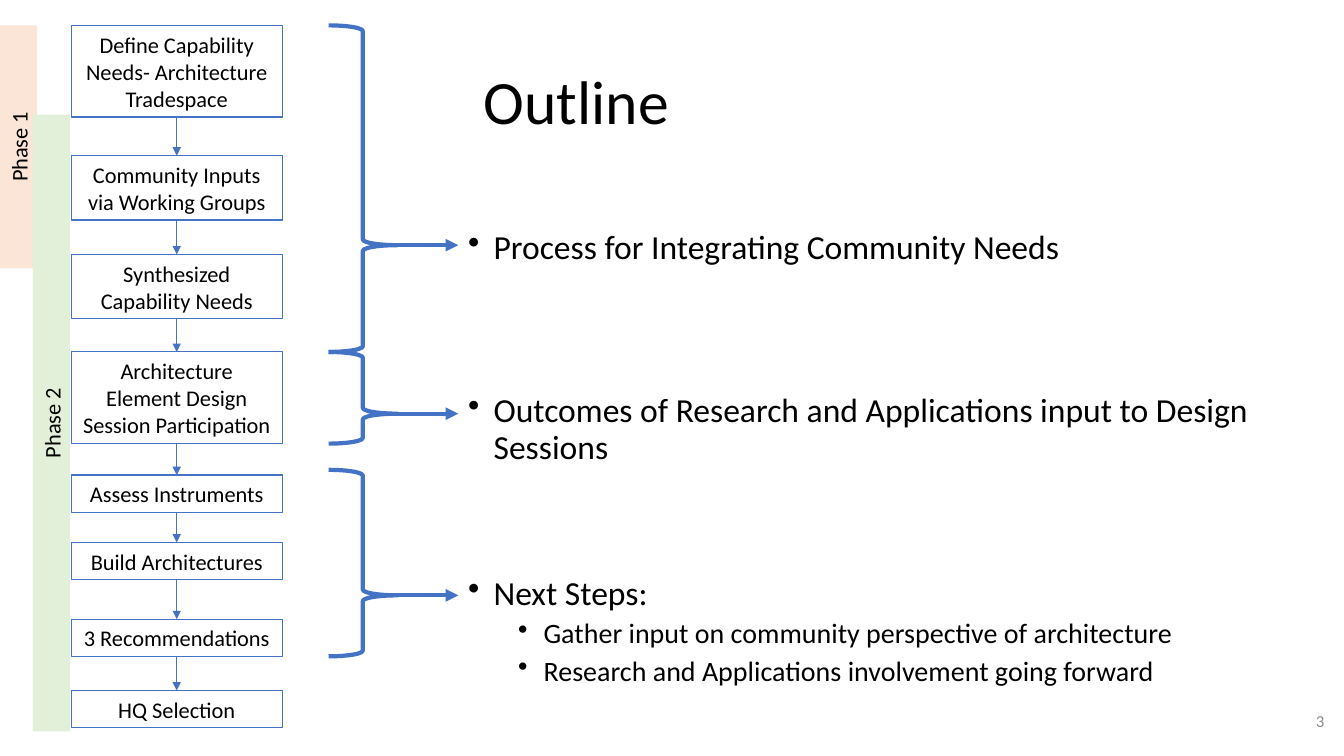
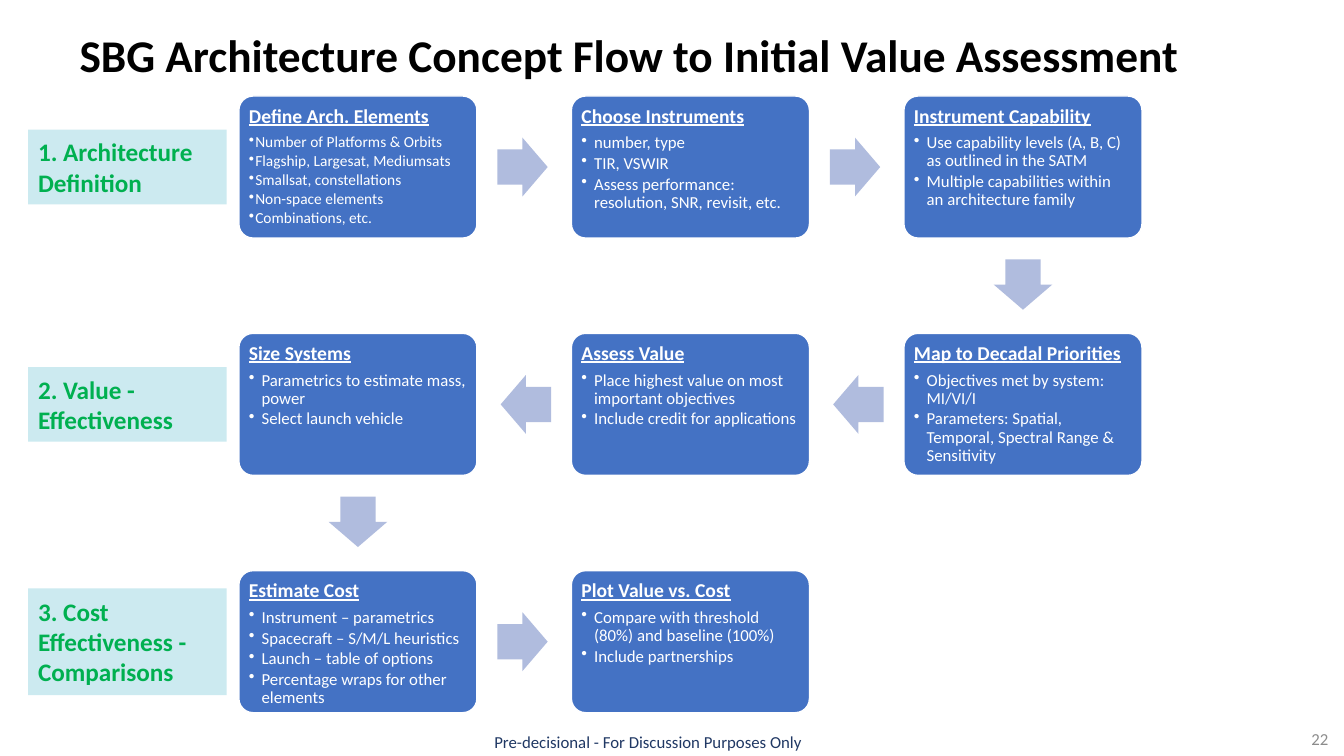
from dataclasses import dataclass
from itertools import pairwise
from math import atan2, degrees
from typing import NamedTuple

from lxml.etree import SubElement
from pptx import Presentation
from pptx.dml.color import RGBColor
from pptx.enum.shapes import MSO_CONNECTOR as Connector, MSO_SHAPE as Preset
from pptx.enum.text import MSO_ANCHOR as Anchor, MSO_AUTO_SIZE as AutoSize, PP_ALIGN as Align
from pptx.oxml.ns import qn
from pptx.util import Cm, Pt


class Box(NamedTuple):
    left: float
    top: float
    width: float
    height: float

    def inner(self, left, top, width, height):
        return Box(self.left + left, self.top + top, width, height)

    def lengths(self):
        return [Cm(value) for value in self]

    def center(self):
        return self.left + self.width / 2, self.top + self.height / 2


def centered_box(x, y, width, height):
    return Box(x - width / 2, y - height / 2, width, height)


@dataclass(frozen=True)
class Theme:
    font: str = "Calibri"
    black: str = "000000"
    white: str = "FFFFFF"
    blue: str = "4472C4"
    navy: str = "203864"
    green: str = "00B050"
    gray: str = "8C8C8C"
    pale_blue: str = "B0BCDE"
    pale_cyan: str = "CCEAF0"
    pale_orange: str = "FBE5D6"
    pale_green: str = "E2F0D9"
    outline_title: float = 44
    flow_title: float = 32.4
    topic: float = 24
    subtopic: float = 20
    label: float = 18
    step: float = 16
    heading: float = 14
    detail: float = 12
    small_detail: float = 11
    note: float = 12


THEME = Theme()


def text_style(size, color=THEME.black, bold=False, underline=False, bullet=None, **paragraph):
    return {
        "font": {"name": THEME.font, "size": Pt(size), "bold": bold, "underline": underline},
        "color": color,
        "paragraph": {"alignment": Align.LEFT, **paragraph},
        "bullet": bullet,
    }


def detail_style(size, indent):
    return text_style(size, THEME.white, bullet=(indent, indent), level=1,
                      line_spacing=0.9, space_after=Pt(size * 0.15))


STYLES = {
    "outline title": text_style(THEME.outline_title, line_spacing=0.9),
    "flow title": text_style(THEME.flow_title, bold=True, line_spacing=0.9),
    "topic": text_style(THEME.topic, bullet=(0.64, 0.64), line_spacing=0.9, space_before=Pt(10)),
    "subtopic": text_style(THEME.subtopic, bullet=(1.9, 0.64), level=1,
                           line_spacing=0.9, space_before=Pt(5)),
    "step": text_style(THEME.step, alignment=Align.CENTER),
    "label": text_style(THEME.label, THEME.green, bold=True),
    "heading": text_style(THEME.heading, THEME.white, bold=True, underline=True,
                          line_spacing=0.9, space_after=Pt(5)),
    "detail": detail_style(THEME.detail, 0.32),
    "small detail": detail_style(THEME.small_detail, 0.16),
    "number": text_style(THEME.note, THEME.gray, alignment=Align.RIGHT),
    "note": text_style(THEME.note, THEME.navy, alignment=Align.CENTER, line_spacing=0.9),
}


def set_values(target, values):
    for name, value in values.items():
        setattr(target, name, value)


def write_text(frame, entries, **frame_values):
    set_values(frame, {"word_wrap": True, "auto_size": AutoSize.NONE, **frame_values})
    for index, (text, style_name) in enumerate(entries):
        style = STYLES[style_name]
        paragraph = frame.add_paragraph() if index else frame.paragraphs[0]
        set_values(paragraph, style["paragraph"])
        run = paragraph.add_run()
        run.text = text
        set_values(run.font, style["font"])
        run.font.color.rgb = RGBColor.from_string(style["color"])
        if style["bullet"]:
            margin, hanging = style["bullet"]
            properties = paragraph._p.get_or_add_pPr()
            properties.set("marL", str(Cm(margin)))
            properties.set("indent", str(-Cm(hanging)))
            SubElement(properties, qn("a:buChar"), char="•")


def add_text(slide, box, entries, **frame_values):
    shape = slide.shapes.add_textbox(*box.lengths())
    write_text(shape.text_frame, entries, **frame_values)


def add_preset(slide, preset, box, fill=None, line=None, weight=1, adjustments=(), rotation=0):
    shape = slide.shapes.add_shape(preset, *box.lengths())
    shape.shadow.inherit = False
    shape.rotation = rotation
    for index, value in enumerate(adjustments):
        shape.adjustments[index] = value
    if fill:
        shape.fill.solid()
        shape.fill.fore_color.rgb = RGBColor.from_string(fill)
    else:
        shape.fill.background()
    if line:
        shape.line.color.rgb = RGBColor.from_string(line)
        shape.line.width = Pt(weight)
    else:
        shape.line.fill.background()
    return shape


def add_arrow(slide, weight, start=(0, 0), end=(0, 0)):
    points = [Cm(value) for value in (*start, *end)]
    arrow = slide.shapes.add_connector(Connector.STRAIGHT, *points)
    arrow.line.color.rgb = RGBColor.from_string(THEME.blue)
    arrow.line.width = Pt(weight)
    SubElement(arrow.line._get_or_add_ln(), qn("a:tailEnd"), type="triangle")
    SubElement(arrow._element.spPr, qn("a:effectLst"))
    return arrow


def add_titled_slide(presentation, title, title_style, title_box, number, number_box):
    slide = presentation.slides.add_slide(presentation.slide_layouts[5])
    names = ("left", "top", "width", "height")
    set_values(slide.shapes.title, dict(zip(names, title_box.lengths())))
    write_text(slide.shapes.title.text_frame, [(title, title_style)], vertical_anchor=Anchor.MIDDLE)
    add_text(slide, number_box, [(number, "number")], vertical_anchor=Anchor.MIDDLE)
    return slide


PHASES = [
    ("Phase 1", THEME.pale_orange, (0, 0, 0.94, 6.12)),
    ("Phase 2", THEME.pale_green, (0.83, 2.25, 0.94, 15.54)),
]
STEPS = [
    ("Define Capability Needs- Architecture Tradespace", 0, 3),
    ("Community Inputs via Working Groups", 3.28, 2),
    ("Synthesized Capability Needs", 5.77, 2),
    ("Architecture Element Design Session Participation", 8.23, 3),
    ("Assess Instruments", 11.33, 1),
    ("Build Architectures", 13.03, 1),
    ("3 Recommendations", 14.96, 1),
    ("HQ Selection", 16.76, 1),
]
TOPICS = [
    (0, 8.23, 5.05, [("Process for Integrating Community Needs", "topic")]),
    (8.23, 2.31, 9.16, [("Outcomes of Research and Applications input to Design Sessions", "topic")]),
    (11.2, 4.7, 13.76, [
        ("Next Steps:", "topic"),
        ("Gather input on community perspective of architecture", "subtopic"),
        ("Research and Applications involvement going forward", "subtopic"),
    ]),
]


def add_phases(slide, box):
    for text, color, place in PHASES:
        band = box.inner(*place)
        turned = centered_box(*band.center(), band.height, band.width)
        shape = add_preset(slide, Preset.RECTANGLE, turned, fill=color, rotation=270)
        write_text(shape.text_frame, [(text, "step")])


def add_steps(slide, box):
    shapes = []
    for text, top, lines in STEPS:
        place = box.inner(0, top, box.width, 0.94 + 0.685 * (lines - 1))
        shape = add_preset(slide, Preset.RECTANGLE, place, line=THEME.blue, weight=0.75)
        write_text(shape.text_frame, [(text, "step")])
        shapes.append(shape)
    for upper, lower in pairwise(shapes):
        arrow = add_arrow(slide, 0.5)
        arrow.begin_connect(upper, 2)
        arrow.end_connect(lower, 0)


def add_topics(slide, box):
    brace_width, arrow_length, tip = 1.73, 1.54, 0.673
    text_left = brace_width + arrow_length
    for top, height, text_top, entries in TOPICS:
        brace = box.inner(0, top, brace_width, height)
        add_preset(slide, Preset.RIGHT_BRACE, brace, line=THEME.blue, weight=3,
                   adjustments=(0.083, tip))
        x, y = brace.left + brace_width, brace.top + tip * height
        add_arrow(slide, 3, (x, y), (x + arrow_length, y))
        add_text(slide, box.inner(text_left, text_top, box.width - text_left, 2.2), entries)


def build_outline(presentation):
    slide = add_titled_slide(presentation, "Outline", "outline title", Box(11.94, 0.79, 19.81, 3.68),
                             "3", Box(26.01, 17.65, 7.62, 1.02))
    add_phases(slide, Box(0, 0.64, 1.77, 17.79))
    add_steps(slide, Box(1.8, 0.64, 5.31, 17.7))
    add_topics(slide, Box(8.28, 0.64, 23.84, 17.7))


ROW_LABELS = [
    ("1. Architecture Definition", 1.88),
    ("2. Value - Effectiveness", 1.88),
    ("3. Cost Effectiveness - Comparisons", 2.69),
]
CARDS = [
    ("Define Arch. Elements", "small detail", [
        "Number of Platforms & Orbits", "Flagship, Largesat, Mediumsats",
        "Smallsat, constellations", "Non-space elements", "Combinations, etc."]),
    ("Choose Instruments", "detail", [
        "number, type", "TIR, VSWIR", "Assess performance: resolution, SNR, revisit, etc."]),
    ("Instrument Capability", "detail", [
        "Use capability levels (A, B, C) as outlined in the SATM",
        "Multiple capabilities within an architecture family"]),
    ("Map to Decadal Priorities", "detail", [
        "Objectives met by system: MI/VI/I",
        "Parameters: Spatial, Temporal, Spectral Range & Sensitivity"]),
    ("Assess Value", "detail", [
        "Place highest value on most important objectives", "Include credit for applications"]),
    ("Size Systems", "detail", ["Parametrics to estimate mass, power", "Select launch vehicle"]),
    ("Estimate Cost", "detail", [
        "Instrument – parametrics", "Spacecraft – S/M/L heuristics",
        "Launch – table of options", "Percentage wraps for other elements"]),
    ("Plot Value vs. Cost", "detail", [
        "Compare with threshold (80%) and baseline (100%)", "Include partnerships"]),
]
COLUMNS = 3
CARD_WIDTH, CARD_HEIGHT = 6, 3.58
ROW_PITCH = 5.98


def add_cards(slide, box):
    column_pitch = (box.width - CARD_WIDTH) / (COLUMNS - 1)
    inset = Cm(0.15)
    margins = {f"margin_{side}": inset for side in ("left", "top", "right", "bottom")}
    centers = []
    for index, (heading, style, details) in enumerate(CARDS):
        row, step = divmod(index, COLUMNS)
        column = COLUMNS - 1 - step if row % 2 else step
        place = box.inner(column * column_pitch, row * ROW_PITCH, CARD_WIDTH, CARD_HEIGHT)
        card = add_preset(slide, Preset.ROUNDED_RECTANGLE, place, fill=THEME.blue,
                          line=THEME.white, adjustments=(0.1,))
        entries = [(heading, "heading")] + [(detail, style) for detail in details]
        write_text(card.text_frame, entries, vertical_anchor=Anchor.TOP, **margins)
        centers.append(place.center())
    for (x, y), (next_x, next_y) in pairwise(centers):
        across, down = next_x - x, next_y - y
        place = centered_box(x + across * 0.495, y + down * 0.495, 1.27, 1.48)
        add_preset(slide, Preset.RIGHT_ARROW, place, fill=THEME.pale_blue,
                   adjustments=(0.6, 0.5), rotation=round(degrees(atan2(down, across))))


def add_row_labels(slide, box):
    for row, (text, height) in enumerate(ROW_LABELS):
        top = row * ROW_PITCH + (CARD_HEIGHT - height) / 2
        label = add_preset(slide, Preset.RECTANGLE, box.inner(0, top, box.width, height),
                           fill=THEME.pale_cyan)
        write_text(label.text_frame, [(text, "label")])


def build_concept_flow(presentation):
    slide = add_titled_slide(presentation, "SBG Architecture Concept Flow to Initial Value Assessment",
                             "flow title", Box(1.75, 0.28, 30.2, 2.36),
                             "22", Box(26.11, 18.11, 7.62, 1.02))
    add_cards(slide, Box(6.02, 2.42, 22.76, 15.54))
    add_row_labels(slide, Box(0.71, 2.42, 5, 15.54))
    add_text(slide, Box(10.62, 18.36, 11.43, 1.02),
             [("Pre-decisional - For Discussion Purposes Only", "note")])


def main():
    presentation = Presentation()
    set_values(presentation, {"slide_width": Cm(33.87), "slide_height": Cm(19.05)})
    build_outline(presentation)
    build_concept_flow(presentation)
    presentation.save("out.pptx")


if __name__ == "__main__":
    main()
